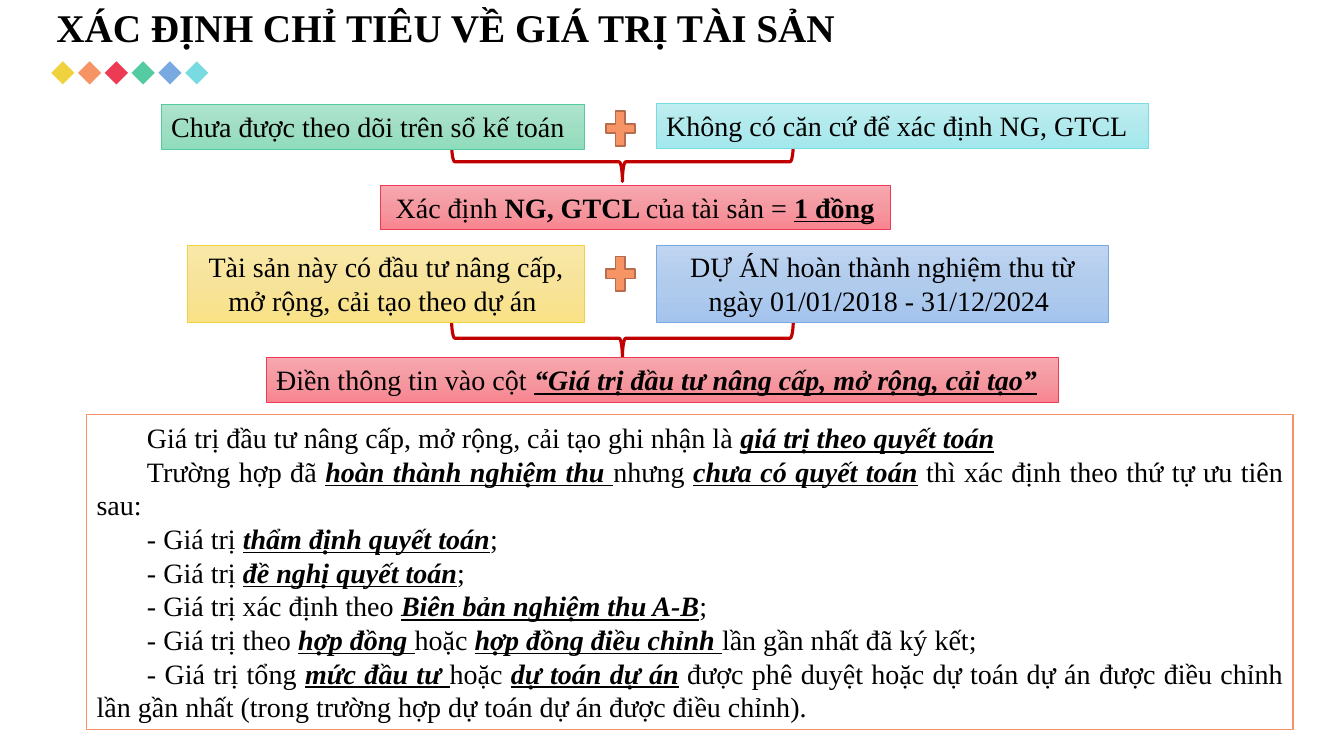
import copy
from dataclasses import dataclass

import pptx
import pptx.dml.color
import pptx.enum.shapes
import pptx.enum.text
import pptx.oxml.ns
import pptx.util

SHAPE = pptx.enum.shapes.MSO_SHAPE
ALIGN = pptx.enum.text.PP_ALIGN
ANCHOR = pptx.enum.text.MSO_ANCHOR
AUTO = pptx.enum.text.MSO_AUTO_SIZE


@dataclass(frozen=True)
class Theme:
    font: str = "Times New Roman"
    title_size: float = 28
    body_size: float = 20
    ink: str = "000000"
    paper: str = "FFFFFF"
    yellow: str = "F0D23F"
    orange: str = "F79465"
    red: str = "ED3B55"
    green: str = "54CBA0"
    blue: str = "78AAE1"
    cyan: str = "77DBE1"
    plus_edge: str = "B76D4B"
    brace: str = "C00000"
    yellow_fade: tuple = ("F9E8A9", "F7E39A", "FAE287")
    red_fade: tuple = ("F7A7AF", "F599A1", "F88590")
    green_fade: tuple = ("AEE4CD", "A0DEC4", "8FDDBC")
    blue_fade: tuple = ("BFD5F1", "B1CBED", "A4C4ED")
    cyan_fade: tuple = ("BFEEF1", "B1E9ED", "A3E8ED")


THEME = Theme()
COLUMNS, ROWS = 160, 90
WIDTH, HEIGHT = pptx.util.Inches(13.33), pptx.util.Inches(7.5)

NOTES = [
    "Giá trị đầu tư nâng cấp, mở rộng, cải tạo ghi nhận là *giá trị theo quyết toán*",
    "Trường hợp đã *hoàn thành nghiệm thu *nhưng *chưa có quyết toán*"
    " thì xác định theo thứ tự ưu tiên sau:",
    "- Giá trị *thẩm định quyết toán*;",
    "- Giá trị *đề nghị quyết toán*;",
    "- Giá trị xác định theo *Biên bản nghiệm thu A-B*;",
    "- Giá trị theo *hợp đồng *hoặc *hợp đồng điều chỉnh *lần gần nhất đã ký kết;",
    "- Giá trị tổng *mức đầu tư *hoặc *dự toán dự án* được phê duyệt hoặc dự toán"
    " dự án được điều chỉnh lần gần nhất (trong trường hợp dự toán dự án được điều chỉnh).",
]


def rgb(color):
    return pptx.dml.color.RGBColor.from_string(color)


def grid(col, row, cols, rows):
    return (round(col * WIDTH / COLUMNS), round(row * HEIGHT / ROWS),
            round(cols * WIDTH / COLUMNS), round(rows * HEIGHT / ROWS))


def emphasised(text):
    parts = text.split("*")
    return [(part, "biu" if i % 2 else "") for i, part in enumerate(parts) if part]


def write(tf, paragraphs, size, align=ALIGN.LEFT, indent=0):
    tf.word_wrap = True
    tf.auto_size = AUTO.SHAPE_TO_FIT_TEXT
    for i, runs in enumerate(paragraphs):
        p = tf.add_paragraph() if i else tf.paragraphs[0]
        p.alignment = align
        if indent:
            p._p.get_or_add_pPr().set("indent", str(pptx.util.Inches(indent)))
        for text, marks in runs:
            r = p.add_run()
            r.text = text
            r.font.name = THEME.font
            r.font.size = pptx.util.Pt(size)
            r.font.color.rgb = rgb(THEME.ink)
            r.font.bold = "b" in marks
            r.font.italic = "i" in marks
            r.font.underline = "u" in marks


def add_shape(slide, kind, place, fill=None, edge=None, weight=1):
    s = slide.shapes.add_shape(kind, *grid(*place))
    s.shadow.inherit = False
    if fill:
        s.fill.solid()
        s.fill.fore_color.rgb = rgb(fill)
    else:
        s.fill.background()
    if edge:
        s.line.color.rgb = rgb(edge)
        s.line.width = pptx.util.Pt(weight)
    else:
        s.line.fill.background()
    return s


def fade(s, colors):
    s.fill.gradient()
    s.fill.gradient_angle = 270
    stops = s._element.spPr.find(".//" + pptx.oxml.ns.qn("a:gsLst"))
    stops.insert(1, copy.deepcopy(stops[0]))
    stops[1].set("pos", "50000")
    for stop, color in zip(s.fill.gradient_stops, colors):
        stop.color.rgb = rgb(color)


def add_box(slide, place, colors, edge, runs, align=ALIGN.LEFT):
    s = add_shape(slide, SHAPE.RECTANGLE, place, THEME.paper, edge, 0.5)
    fade(s, colors)
    s.text_frame.vertical_anchor = ANCHOR.TOP
    write(s.text_frame, [runs], THEME.body_size, align)


def add_plus(slide, row):
    add_shape(slide, SHAPE.MATH_PLUS, (71.52, row, 4.68, 5.64),
              THEME.orange, THEME.plus_edge)


def add_brace(slide, row):
    depth, span, centre = 4.68, 40.68, 74.1
    place = (centre - depth / 2, row + (depth - span) / 2, depth, span)
    s = add_shape(slide, SHAPE.LEFT_BRACE, place, edge=THEME.brace, weight=2.25)
    s.rotation = 270


def add_title(slide, text):
    s = slide.shapes.add_textbox(*grid(5.52, -0.24, 108.6, 6.84))
    write(s.text_frame, [[(text, "b")]], THEME.title_size)


def add_diamonds(slide):
    colors = (THEME.yellow, THEME.orange, THEME.red,
              THEME.green, THEME.blue, THEME.cyan)
    for i, color in enumerate(colors):
        add_shape(slide, SHAPE.DIAMOND, (6.1 + 3.19 * i, 7.3, 2.76, 2.76), color)


def add_notes_panel(slide):
    s = add_shape(slide, SHAPE.RECTANGLE, (10.32, 49.32, 143.64, 37.56),
                  THEME.paper, THEME.orange)
    s.text_frame.vertical_anchor = ANCHOR.MIDDLE
    write(s.text_frame, [emphasised(note) for note in NOTES],
          THEME.body_size, ALIGN.JUSTIFY, 0.5)


def main():
    prs = pptx.Presentation()
    prs.slide_width, prs.slide_height = WIDTH, HEIGHT
    slide = prs.slides.add_slide(prs.slide_layouts[6])

    add_title(slide, "XÁC ĐỊNH CHỈ TIÊU VỀ GIÁ TRỊ TÀI SẢN")
    add_diamonds(slide)
    add_notes_panel(slide)
    for plus_row, brace_row in ((12.48, 16.92), (29.76, 37.92)):
        add_plus(slide, plus_row)
        add_brace(slide, brace_row)

    add_box(slide, (19.2, 12.48, 50.4, 5.28), THEME.green_fade, THEME.green,
            emphasised("Chưa được theo dõi trên sổ kế toán"))
    add_box(slide, (78.12, 12.36, 58.56, 5.28), THEME.cyan_fade, THEME.cyan,
            emphasised("Không có căn cứ để xác định NG, GTCL"))
    add_box(slide, (45.24, 22.08, 60.72, 5.28), THEME.red_fade, THEME.red,
            [("Xác định ", ""), ("NG, GTCL ", "b"),
             ("của tài sản = ", ""), ("1 đồng", "bu")], ALIGN.CENTER)
    add_box(slide, (22.32, 29.16, 47.28, 9.24), THEME.yellow_fade, THEME.yellow,
            emphasised("Tài sản này có đầu tư nâng cấp, mở rộng, cải tạo theo dự án "),
            ALIGN.CENTER)
    add_box(slide, (78.12, 29.16, 53.88, 9.24), THEME.blue_fade, THEME.blue,
            emphasised("DỰ ÁN hoàn thành nghiệm thu từ ngày 01/01/2018 - 31/12/2024 "),
            ALIGN.CENTER)
    add_box(slide, (31.68, 42.6, 94.32, 5.28), THEME.red_fade, THEME.red,
            emphasised("Điền thông tin vào cột *“Giá trị đầu tư nâng cấp, mở rộng, cải tạo”*"))

    prs.save("out.pptx")


if __name__ == "__main__":
    main()
